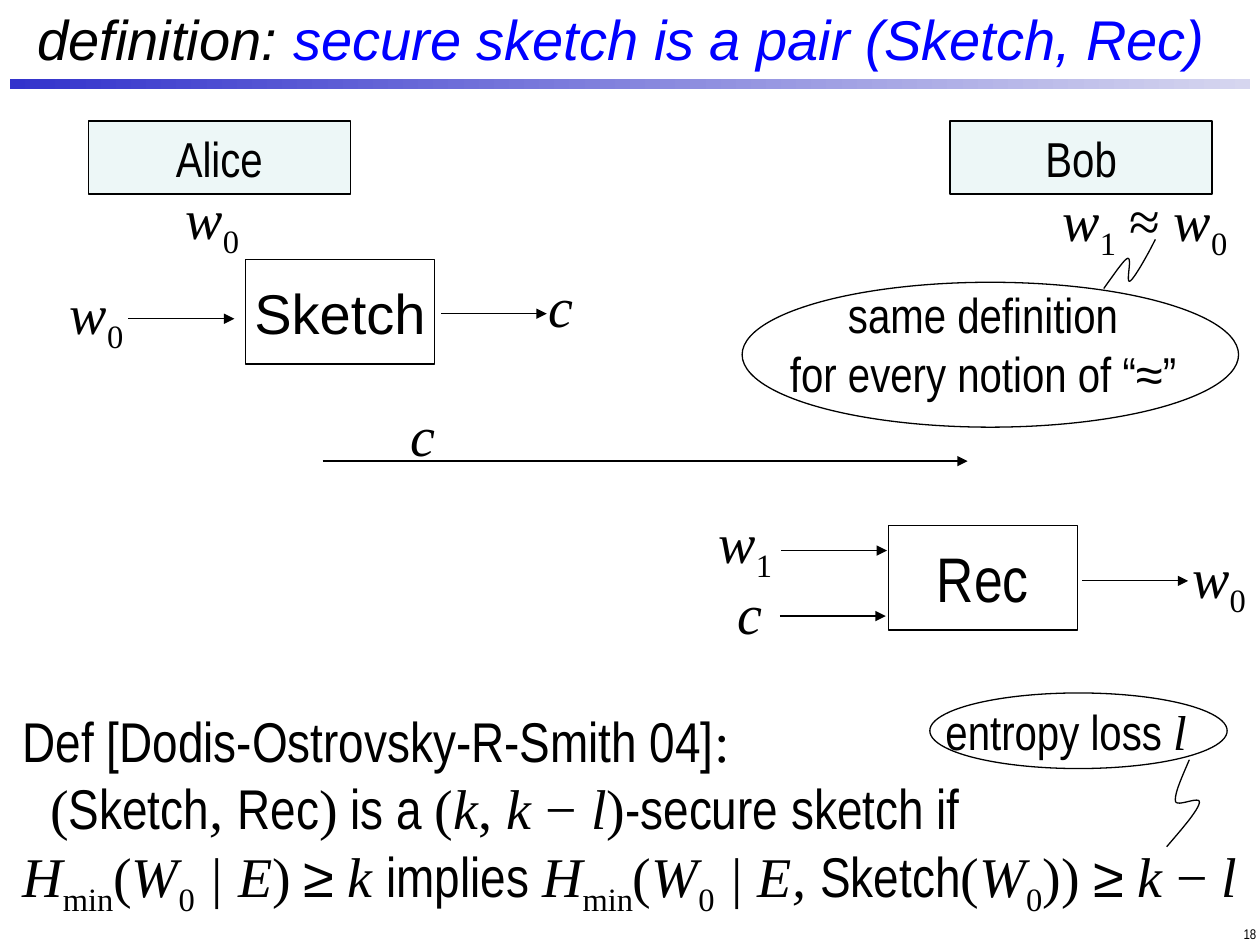
from lxml.etree import SubElement
from pptx import Presentation
from pptx.dml.color import RGBColor
from pptx.enum.shapes import MSO_CONNECTOR, MSO_SHAPE
from pptx.enum.text import MSO_ANCHOR, MSO_AUTO_SIZE, PP_ALIGN
from pptx.oxml.ns import qn
from pptx.util import Pt

PX = 9144
BLACK = RGBColor(0x00, 0x00, 0x00)
BLUE = RGBColor(0x00, 0x00, 0xFF)
BAR_START = RGBColor(0x33, 0x33, 0xCC)
BAR_END = RGBColor(0xD6, 0xD6, 0xEF)
PARTY_FILL = RGBColor(0xBB, 0xE0, 0xE3)

ARIAL = {"name": "Arial"}
TITLE = {"name": "Arial", "italic": True}
NARROW = {"name": "Arial Narrow"}
ROMAN = {"name": "Times New Roman"}
MATH = {"name": "Times New Roman", "italic": True}
SUBSCRIPT = {"name": "Times New Roman", "baseline": -25000}

W0 = [("w", MATH), ("0", SUBSCRIPT)]
W1 = [("w", MATH), ("1", SUBSCRIPT)]
C = [("c", MATH)]
MIN_ENTROPY = [("H", MATH), ("min", SUBSCRIPT), ("(", ROMAN), ("W", MATH), ("0", SUBSCRIPT)]

DEFINITION = [
    [("Def [Dodis-Ostrovsky-R-Smith 04]", NARROW), (":", ROMAN)],
    [("(", ROMAN), ("Sketch", NARROW), (", ", MATH), ("Rec", NARROW), (")", ROMAN),
     (" is a ", NARROW), ("(", ROMAN), ("k", MATH), (", ", ROMAN), ("k ", MATH),
     ("− ", ROMAN), ("l", MATH), (")", ROMAN), ("-secure sketch if", NARROW)],
    [*MIN_ENTROPY, (" | E", MATH), (")", ROMAN), (" ≥ ", NARROW), ("k ", MATH),
     ("implies ", NARROW), *MIN_ENTROPY, (" | E, ", MATH), ("Sketch", NARROW),
     ("(", ROMAN), ("W", MATH), ("0", SUBSCRIPT), (")) ", ROMAN), ("≥ ", NARROW),
     ("k ", MATH), ("− ", ROMAN), ("l", MATH)],
]


def emu(*lengths):
    """Turn px lengths into EMU."""
    return [round(length * PX) for length in lengths]


def add_run(paragraph, text, name, size, color=BLACK, italic=False, baseline=0):
    """Append one formatted run to a paragraph."""
    run = paragraph.add_run()
    run.text = text
    run.font.name = name
    run.font.size = Pt(size)
    run.font.italic = italic
    run.font.color.rgb = color
    if baseline:
        run.font._element.set("baseline", str(baseline))


def write_text(shape, paragraphs, size, align=PP_ALIGN.CENTER, anchor=MSO_ANCHOR.TOP,
               wrap=False, grow=False):
    """Fill a shape with paragraphs, each a list of text and style pairs."""
    frame = shape.text_frame
    frame.word_wrap = wrap
    frame.vertical_anchor = anchor
    frame.auto_size = MSO_AUTO_SIZE.SHAPE_TO_FIT_TEXT if grow else MSO_AUTO_SIZE.NONE
    for index, runs in enumerate(paragraphs):
        paragraph = frame.add_paragraph() if index else frame.paragraphs[0]
        paragraph.alignment = align
        for text, style in runs:
            add_run(paragraph, text, **{"size": size, **style})


def add_text(slide, box, paragraphs, size=32, **text_format):
    """Add a text box and return it."""
    shape = slide.shapes.add_textbox(*emu(*box))
    write_text(shape, paragraphs, size, **text_format)
    return shape


def outline(shape):
    """Give a shape the thin black line and no shadow."""
    shape.shadow.inherit = False
    shape.line.color.rgb = BLACK
    shape.line.width = Pt(0.75)


def add_outlined(slide, kind, box):
    """Add an unfilled preset shape with a black outline."""
    shape = slide.shapes.add_shape(kind, *emu(*box))
    outline(shape)
    shape.fill.background()
    return shape


def add_box(slide, box, label, style, size, fill=None):
    """Add a labelled rectangle, filled at a quarter opacity if a fill is given."""
    shape = add_outlined(slide, MSO_SHAPE.RECTANGLE, box)
    if fill is not None:
        shape.fill.solid()
        shape.fill.fore_color.rgb = fill
        color = shape.fill._xPr.find(qn("a:solidFill"))[0]
        SubElement(color, qn("a:alpha"), val="25000")
    write_text(shape, [[(label, style)]], size, anchor=MSO_ANCHOR.MIDDLE)


def add_arrow(slide, left, y, length):
    """Add a horizontal arrow pointing right."""
    connector = slide.shapes.add_connector(
        MSO_CONNECTOR.STRAIGHT, *emu(left, y, left + length, y))
    connector.line.color.rgb = BLACK
    connector.line.width = Pt(0.75)
    SubElement(connector.line._get_or_add_ln(), qn("a:tailEnd"), type="triangle")
    SubElement(connector._element.spPr, qn("a:effectLst"))


def bezier_point(points, t):
    """Return the point at t on a cubic curve."""
    weights = ((1 - t) ** 3, 3 * t * (1 - t) ** 2, 3 * t * t * (1 - t), t ** 3)
    return tuple(sum(w * p[axis] for w, p in zip(weights, points)) for axis in (0, 1))


def add_squiggle(slide, points, steps=12):
    """Add an open outline through chained cubic curves."""
    curve = [bezier_point(points[first:first + 4], step / steps)
             for first in range(0, len(points) - 1, 3)
             for step in range(1, steps + 1)]
    builder = slide.shapes.build_freeform(*emu(*points[0]))
    builder.add_line_segments([emu(*point) for point in curve], close=False)
    shape = builder.convert_to_shape()
    outline(shape)
    shape.fill.background()


def add_header(slide):
    """Add the gradient bar, the title and the slide number."""
    bar = slide.shapes.add_shape(MSO_SHAPE.RECTANGLE, *emu(8, 63, 984, 8))
    bar.shadow.inherit = False
    bar.line.fill.background()
    bar.fill.gradient()
    bar.fill.gradient_angle = 0
    for stop, color in zip(bar.fill.gradient_stops, (BAR_START, BAR_END)):
        stop.color.rgb = color
    title = [("definition:", TITLE),
             (" secure sketch is a pair (Sketch, Rec)", {**TITLE, "color": BLUE})]
    add_text(slide, (20, 7, 987, 47), [title], align=PP_ALIGN.LEFT,
             anchor=MSO_ANCHOR.MIDDLE, wrap=True)
    add_text(slide, (799, 716, 208, 50), [[("18", NARROW)]], size=8,
             align=PP_ALIGN.RIGHT, anchor=MSO_ANCHOR.MIDDLE)


def add_protocol(slide):
    """Add both parties, their algorithms and the values between them."""
    for left, name in ((70, "Alice"), (754, "Bob")):
        add_box(slide, (left, 96, 208, 58), name, NARROW, 28, PARTY_FILL)
    add_box(slide, (195, 206, 150, 83), "Sketch", ARIAL, 32)
    add_box(slide, (705, 417, 150, 83), "Rec", NARROW, 36)
    for left, top, runs in ((136, 141, W0), (832, 142, W1), (44, 216, W0),
                            (559, 398, W1), (935, 426, W0)):
        add_text(slide, (left, top, 65, 64), [runs], grow=True)
    for left, top in ((316, 313), (425, 211), (575, 454)):
        add_text(slide, (left, top, 40, 64), [C], grow=True)
    add_text(slide, (883, 142, 101, 64), [[("≈ ", ROMAN), *W0]],
             align=PP_ALIGN.RIGHT, grow=True)
    add_arrow(slide, 256, 366, 512)
    for left, y in ((102, 253), (350, 249), (620, 437), (619, 489), (859, 461)):
        add_arrow(slide, left, y, 84)


def add_callouts(slide):
    """Add the two ellipse remarks with their curved pointers."""
    remark = add_text(slide, (617, 221, 335, 104), [[("same definition ", NARROW)]],
                      size=28, wrap=True, grow=True)
    paragraph = remark.text_frame.paragraphs[0]
    paragraph.add_line_break()
    add_run(paragraph, "for every notion of “≈” ", size=28, **NARROW)
    add_outlined(slide, MSO_SHAPE.OVAL, (589, 224, 394, 115))
    add_squiggle(slide, [(876, 229), (884, 218), (892, 206), (895, 205), (899, 204),
                         (893, 226), (897, 223), (900, 221), (909, 206), (917, 190)])
    add_text(slide, (718, 552, 266, 57), [[("entropy loss ", NARROW), ("l ", MATH)]],
             size=28, wrap=True, grow=True)
    add_outlined(slide, MSO_SHAPE.OVAL, (738, 550, 236, 60))
    add_squiggle(slide, [(926, 672), (939, 657), (951, 643), (952, 637), (953, 631),
                         (934, 641), (933, 636), (932, 630), (938, 617), (944, 603)])


def add_definition(slide):
    """Add the formal definition with its second line indented."""
    shape = add_text(slide, (8, 556, 1033, 160), DEFINITION, align=PP_ALIGN.LEFT, wrap=True)
    properties = shape.text_frame.paragraphs[1]._p.get_or_add_pPr()
    properties.set("marL", str(22 * PX))


def main():
    """Build and save the slide."""
    presentation = Presentation()
    presentation.slide_width, presentation.slide_height = emu(1000, 750)
    slide = presentation.slides.add_slide(presentation.slide_layouts[6])
    add_header(slide)
    add_protocol(slide)
    add_definition(slide)
    add_callouts(slide)
    presentation.save("out.pptx")


if __name__ == "__main__":
    main()
